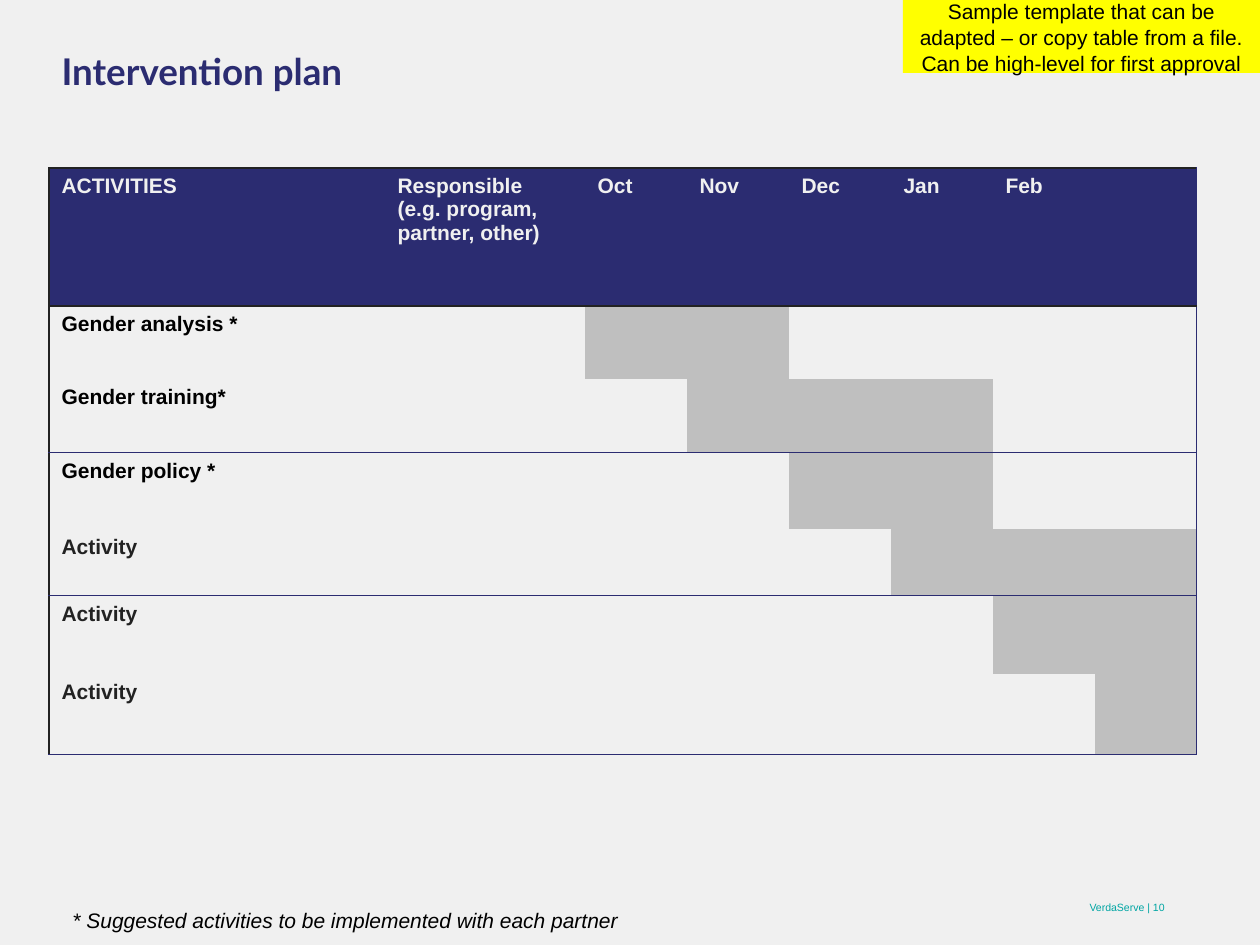
from lxml.etree import SubElement
from pptx import Presentation
from pptx.dml.color import RGBColor
from pptx.enum.shapes import MSO_SHAPE
from pptx.enum.text import MSO_ANCHOR, MSO_AUTO_SIZE, PP_ALIGN
from pptx.oxml.ns import qn
from pptx.util import Emu, Pt

EMU_PER_PX = 914400 / 126

NAVY = RGBColor(0x2B, 0x2C, 0x71)
TEAL = RGBColor(0x00, 0xA5, 0xA3)
PALE = RGBColor(0xF0, 0xF0, 0xF0)
GREY = RGBColor(0xBF, 0xBF, 0xBF)
DARK = RGBColor(0x22, 0x22, 0x22)
BLACK = RGBColor(0x00, 0x00, 0x00)
YELLOW = RGBColor(0xFF, 0xFF, 0x00)

NO_STYLE_NO_GRID = "{2D5ABB26-0587-4C30-8999-92F81FD0307C}"
COLUMN_WIDTHS = [336, 200] + [102] * 6
ROW_HEIGHTS = [138, 73, 74, 76, 67, 78, 81]
HEADINGS = ["ACTIVITIES", "Responsible\n(e.g. program, partner, other)",
            "Oct", "Nov", "Dec", "Jan", "Feb", ""]
# Activity, text colour, first and last shaded column
ACTIVITIES = [
    ("Gender analysis *", BLACK, 2, 3),
    ("Gender training*", BLACK, 3, 5),
    ("Gender policy *", BLACK, 4, 5),
    ("Activity", DARK, 5, 7),
    ("Activity", DARK, 6, 7),
    ("Activity", DARK, 7, 7),
]
ROWS_PER_BAND = 2


def px(length):
    return Emu(round(length * EMU_PER_PX))


def box(left, top, width, height):
    return px(left), px(top), px(width), px(height)


def write_text(frame, text, font="Arial", size=12, color=BLACK, bold=False,
               italic=False, align=PP_ALIGN.LEFT, spacing=None):
    frame.text = text
    for paragraph in frame.paragraphs:
        paragraph.alignment = align
        if spacing:
            paragraph.line_spacing = spacing
        for run in paragraph.runs:
            run.font.name = font
            run.font.size = Pt(size)
            run.font.bold = bold
            run.font.italic = italic
            run.font.color.rgb = color


def add_title(slide, text):
    title = slide.shapes.title
    title.left, title.top, title.width, title.height = box(49, 42, 1118, 73)
    frame = title.text_frame
    frame.auto_size = MSO_AUTO_SIZE.NONE
    frame.vertical_anchor = MSO_ANCHOR.TOP
    write_text(frame, text, font="Lato", size=21, color=NAVY, bold=True)


def add_label(slide, position, text, anchor=MSO_ANCHOR.TOP, margin=6, **text_format):
    frame = slide.shapes.add_textbox(*box(*position)).text_frame
    frame.word_wrap = True
    frame.vertical_anchor = anchor
    frame.margin_top = frame.margin_bottom = px(margin)
    write_text(frame, text, **text_format)


def add_note(slide, position, text):
    shape = slide.shapes.add_shape(MSO_SHAPE.RECTANGLE, *box(*position))
    shape.shadow.inherit = False
    shape.fill.solid()
    shape.fill.fore_color.rgb = YELLOW
    shape.line.fill.background()
    shape.text_frame.vertical_anchor = MSO_ANCHOR.MIDDLE
    write_text(shape.text_frame, text, align=PP_ALIGN.CENTER, spacing=1.03)


def fill_cell(cell, color):
    cell.fill.solid()
    cell.fill.fore_color.rgb = color


def set_borders(cell, borders):
    """Borders map a side (L, R, T, B) to a colour and a width; others are cleared."""
    properties = cell._tc.get_or_add_tcPr()
    for index, side in enumerate("LRTB"):
        line = SubElement(properties, qn(f"a:ln{side}"))
        if side in borders:
            color, width = borders[side]
            line.set("w", str(Pt(width)))
            SubElement(SubElement(line, qn("a:solidFill")), qn("a:srgbClr"), val=str(color))
        else:
            SubElement(line, qn("a:noFill"))
        properties.insert(index, line)  # lines come before the fill


def cell_borders(row, column):
    strong, thin = (DARK, 1), (NAVY, 0.75)
    borders = {}
    if column == 0:
        borders["L"] = strong
    if column == len(COLUMN_WIDTHS) - 1:
        borders["R"] = thin
    if row == 0:
        borders["T"] = borders["B"] = strong
    elif row == 1:
        borders["T"] = strong
    elif row % ROWS_PER_BAND == 1:
        borders["T"] = thin
    elif row % ROWS_PER_BAND == 0:
        borders["B"] = thin
    return borders


def add_plan(slide, left, top):
    position = box(left, top, sum(COLUMN_WIDTHS), sum(ROW_HEIGHTS))
    frame = slide.shapes.add_table(len(ROW_HEIGHTS), len(COLUMN_WIDTHS), *position)
    table = frame.table
    table.horz_banding = False
    table._tbl.tblPr.find(qn("a:tableStyleId")).text = NO_STYLE_NO_GRID
    for column, width in zip(table.columns, COLUMN_WIDTHS):
        column.width = px(width)
    for row, height in zip(table.rows, ROW_HEIGHTS):
        row.height = px(height)

    # Header row
    for column, heading in enumerate(HEADINGS):
        cell = table.cell(0, column)
        fill_cell(cell, NAVY)
        write_text(cell.text_frame, heading, color=PALE, bold=True)

    # Activities with their shaded months
    for row, (name, color, first, last) in enumerate(ACTIVITIES, start=1):
        write_text(table.cell(row, 0).text_frame, name, color=color, bold=True)
        for column in range(len(COLUMN_WIDTHS)):
            fill_cell(table.cell(row, column), GREY if first <= column <= last else PALE)

    # Outline and lines between the bands
    for row in range(len(ROW_HEIGHTS)):
        for column in range(len(COLUMN_WIDTHS)):
            set_borders(table.cell(row, column), cell_borders(row, column))


def main():
    presentation = Presentation()
    presentation.slide_width, presentation.slide_height = px(1260), px(945)
    slide = presentation.slides.add_slide(presentation.slide_layouts[5])
    slide.background.fill.solid()
    slide.background.fill.fore_color.rgb = PALE

    add_title(slide, "Intervention plan")
    add_label(slide, (883, 882, 294, 50), "VerdaServe | 10", anchor=MSO_ANCHOR.MIDDLE,
              size=6, color=TEAL, align=PP_ALIGN.RIGHT)
    add_plan(slide, 49, 168)
    add_label(slide, (60, 895, 1012, 50),
              "* Suggested activities to be implemented with each partner",
              margin=13, italic=True)
    add_note(slide, (903, 0, 357, 73),
             "Sample template that can be adapted – or copy table from a file. "
             "Can be high-level for first approval")

    presentation.save("out.pptx")


if __name__ == "__main__":
    main()
